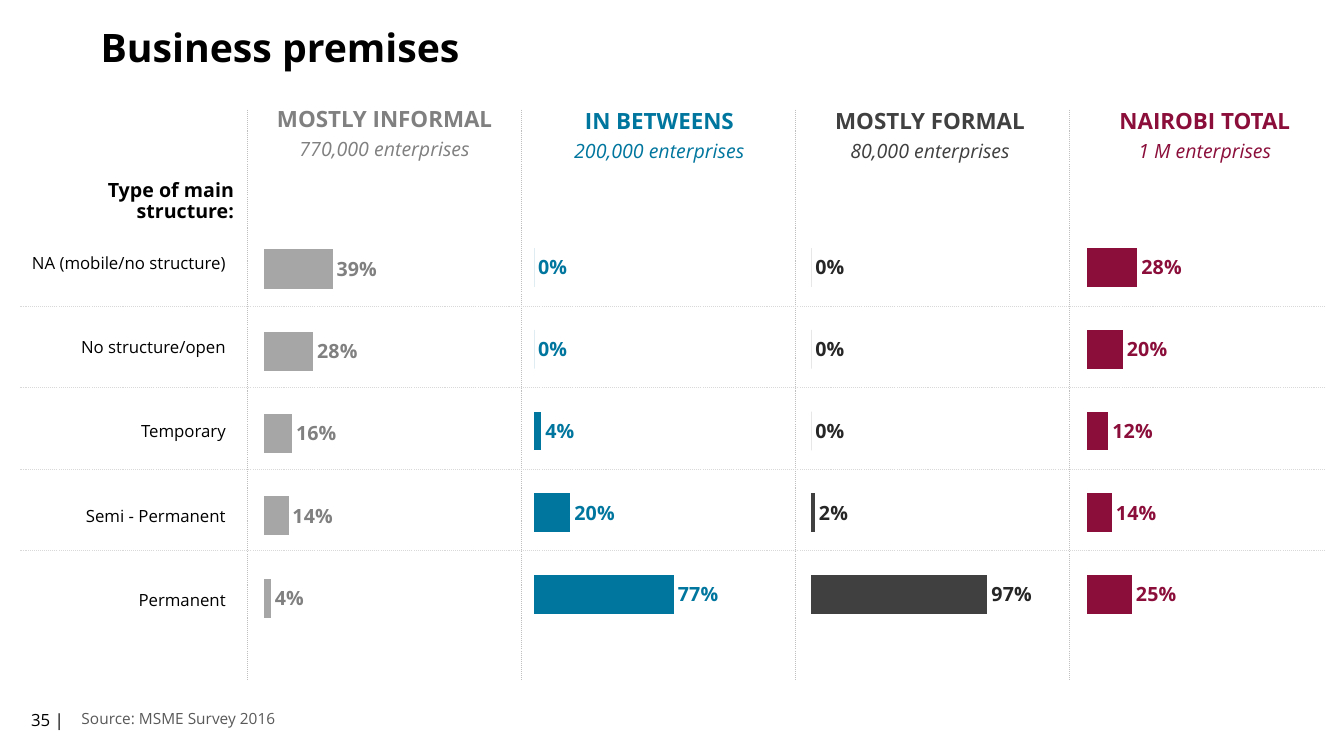
from lxml import etree
from pptx import Presentation
from pptx import util as u
from pptx.chart.data import CategoryChartData
from pptx.dml.color import RGBColor
from pptx.enum import chart as charts, dml, shapes, text
from pptx.oxml.ns import qn

FONT = "Open Sans"
COLORS = {
    "black": "000000", "source": "595959", "column line": "BFBFBF", "row line": "D9D9D9",
    "bar grey": "A6A6A6", "grey": "808080", "blue": "00769E", "dark": "404040",
    "near black": "262626", "wine": "8B0E3A",
}
STRUCTURES = ["NA (mobile/no structure)", "No structure/open", "Temporary",
              "Semi - Permanent", "Permanent"]
SEGMENTS = [
    {"name": "MOSTLY INFORMAL", "size": "770,000 enterprises", "head": (2.61, 0.94, 2.41, 0.68),
     "chart": (-0.08, 2.04, 5.32, 4.41), "shares": [0.39, 0.28, 0.16, 0.14, 0.04],
     "bar": "bar grey", "label": "grey", "title": "grey"},
    {"name": "IN BETWEENS", "size": "200,000 enterprises", "head": (5.31, 0.96, 2.46, 0.68),
     "chart": (2.52, 2.03, 5.48, 4.38), "shares": [0, 0, 0.04, 0.2, 0.77],
     "bar": "blue", "label": "blue", "title": "blue"},
    {"name": "MOSTLY FORMAL", "size": "80,000 enterprises", "head": (8.14, 0.96, 2.17, 0.68),
     "chart": (5.27, 2.03, 5.48, 4.38), "shares": [0, 0, 0, 0.02, 0.97],
     "bar": "dark", "label": "near black", "title": "dark"},
    {"name": "NAIROBI TOTAL", "size": "1 M enterprises", "head": (10.95, 0.96, 2, 0.68),
     "chart": (8, 2.03, 5.48, 4.38), "shares": [0.28, 0.2, 0.12, 0.14, 0.25],
     "bar": "wine", "label": "wine", "title": "wine"},
]
PLOT_AREA = {"layoutTarget": "inner", "xMode": "edge", "yMode": "edge",
             "x": 0.507, "y": 0.05, "w": 0.493, "h": 0.926}
TABLE = (0.05, 2.19, 2.2, 4.17)
COLUMN_LINES = {"start": 2.45, "step": 2.72, "top": 1.09, "bottom": 6.76}
ROW_LINES = {"start": 3.04, "step": 0.807, "left": 0.2, "right": 13.14}


def inches(values):
    return [u.Inches(value) for value in values]


def style_font(font, size, color, bold=False, italic=False):
    font.name, font.size, font.bold, font.italic = FONT, u.Pt(size), bold, italic
    font.color.rgb = RGBColor.from_string(COLORS[color])


def add_run(paragraph, content, *style):
    run = paragraph.add_run()
    run.text = content
    style_font(run.font, *style)


def add_text(slide, box, lines, align="LEFT", spacing=1.0, anchor="TOP"):
    frame = slide.shapes.add_textbox(*inches(box)).text_frame
    frame.word_wrap = True
    frame.vertical_anchor = getattr(text.MSO_ANCHOR, anchor)
    for index, line in enumerate(lines):
        paragraph = frame.add_paragraph() if index else frame.paragraphs[0]
        paragraph.alignment = getattr(text.PP_ALIGN, align)
        paragraph.line_spacing = spacing
        add_run(paragraph, *line)


def add_dotted_line(slide, ends, color):
    connector = slide.shapes.add_connector(shapes.MSO_CONNECTOR.STRAIGHT, *inches(ends))
    connector.line.color.rgb = RGBColor.from_string(COLORS[color])
    connector.line.width = u.Pt(0.75)
    connector.line.dash_style = dml.MSO_LINE.ROUND_DOT
    etree.SubElement(connector.element.spPr, qn("a:effectLst"))


def place_plot(chart):
    plot_area = chart.element.find(".//" + qn("c:plotArea"))
    for layout in plot_area.findall(qn("c:layout")):
        plot_area.remove(layout)
    layout = etree.Element(qn("c:layout"))
    manual = etree.SubElement(layout, qn("c:manualLayout"))
    for name, value in PLOT_AREA.items():
        etree.SubElement(manual, qn("c:" + name)).set("val", str(value))
    plot_area.insert(0, layout)


def add_share_chart(slide, segment):
    data = CategoryChartData(number_format="0%")
    data.categories = ["1", "2", "3", "4", "5"]
    data.add_series("Series 1", segment["shares"])
    chart = slide.shapes.add_chart(charts.XL_CHART_TYPE.BAR_CLUSTERED,
                                   *inches(segment["chart"]), data).chart
    chart.has_legend = chart.has_title = False
    style_font(chart.font, 10, "black")
    chart.category_axis.reverse_order = True
    chart.category_axis.visible = chart.value_axis.visible = False
    chart.value_axis.has_major_gridlines = False
    chart.value_axis.minimum_scale, chart.value_axis.maximum_scale = 0, 1.5
    plot = chart.plots[0]
    plot.gap_width, plot.vary_by_categories = 110, False
    fill = plot.series[0].format.fill
    fill.solid()
    fill.fore_color.rgb = RGBColor.from_string(COLORS[segment["bar"]])
    labels = plot.series[0].data_labels
    labels.show_value = True
    labels.position = charts.XL_LABEL_POSITION.OUTSIDE_END
    labels.number_format, labels.number_format_is_linked = "0%", False
    style_font(labels.font, 14, segment["label"], True)
    place_plot(chart)


def add_structure_table(slide):
    table = slide.shapes.add_table(len(STRUCTURES), 1, *inches(TABLE)).table
    table.first_row = table.horz_banding = False
    for row, structure in enumerate(STRUCTURES):
        cell = table.cell(row, 0)
        cell.fill.background()
        cell.vertical_anchor = text.MSO_ANCHOR.MIDDLE
        cell.margin_left = cell.margin_right = cell.margin_top = u.Inches(0.01)
        cell.margin_bottom = 0
        paragraph = cell.text_frame.paragraphs[0]
        paragraph.alignment = text.PP_ALIGN.RIGHT
        add_run(paragraph, structure, 12, "black")


def main():
    """Build the business premises slide."""
    presentation = Presentation()
    presentation.slide_width, presentation.slide_height = inches((13.33, 7.5))
    slide = presentation.slides.add_slide(presentation.slide_layouts[6])
    for segment in reversed(SEGMENTS):
        add_share_chart(slide, segment)
    add_text(slide, (0.9, 0.22, 10.71, 0.54), [("Business premises", 28, "black", True)],
             spacing=0.9, anchor="MIDDLE")
    add_text(slide, (0.21, 6.99, 0.69, 0.4), [("35 |", 12, "black")])
    add_structure_table(slide)
    add_text(slide, (0.05, 1.74, 2.37, 0.34),
             [("Type of main structure:", 14, "black", True)], "RIGHT", 0.9)
    add_text(slide, (0.71, 6.99, 6.81, 0.29), [("Source: MSME Survey 2016", 11, "source")])
    for index, segment in enumerate(SEGMENTS):
        add_text(slide, segment["head"],
                 [(segment["name"], 16, segment["title"], True),
                  (segment["size"], 14, segment["title"], False, True)], "CENTER", 1.2)
        x = COLUMN_LINES["start"] + index * COLUMN_LINES["step"]
        add_dotted_line(slide, (x, COLUMN_LINES["top"], x, COLUMN_LINES["bottom"]), "column line")
    for index in range(len(STRUCTURES) - 1):
        y = ROW_LINES["start"] + index * ROW_LINES["step"]
        add_dotted_line(slide, (ROW_LINES["right"], y, ROW_LINES["left"], y), "row line")
    presentation.save("out.pptx")


if __name__ == "__main__":
    main()
